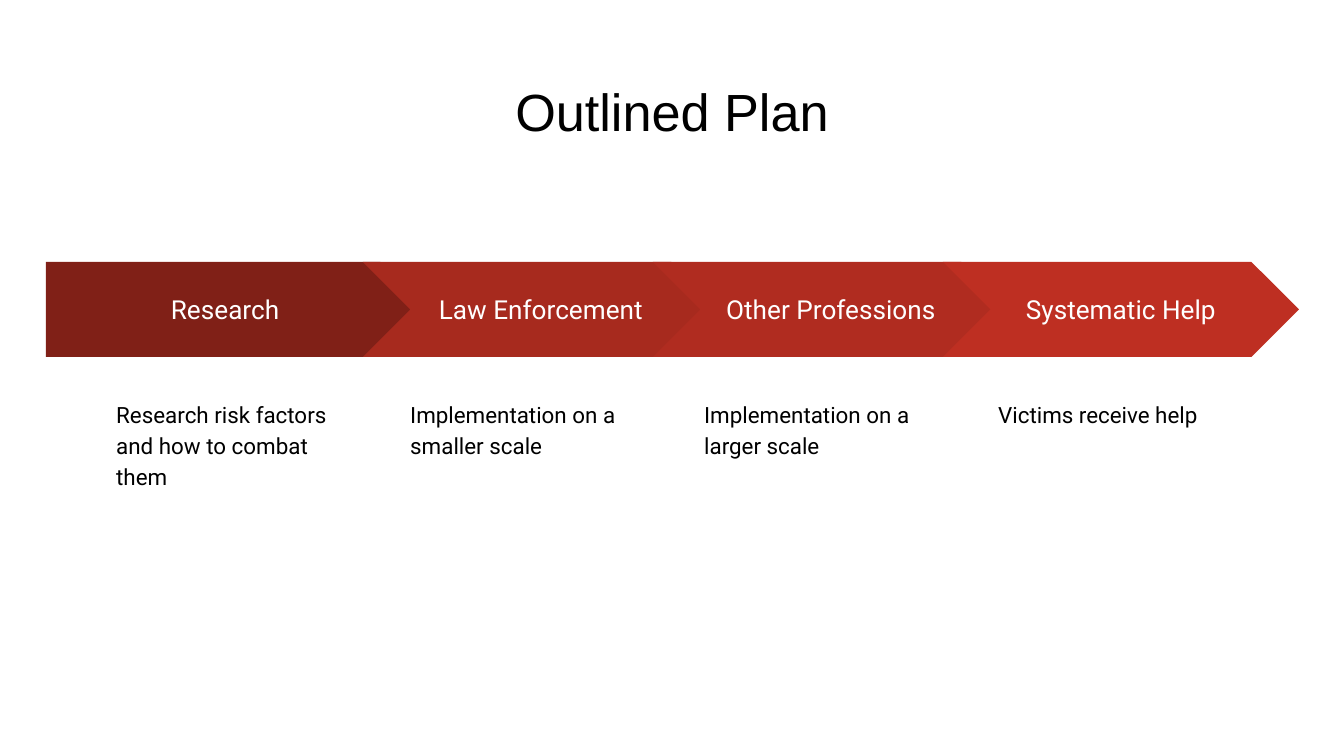
"""Build the Outlined Plan slide: four chained steps with a note under each."""
import pptx
import pptx.dml.color
import pptx.enum.shapes
import pptx.enum.text
import pptx.util

RGBColor = pptx.dml.color.RGBColor
MSO_SHAPE = pptx.enum.shapes.MSO_SHAPE
PP_ALIGN = pptx.enum.text.PP_ALIGN
MSO_ANCHOR = pptx.enum.text.MSO_ANCHOR

BLACK = RGBColor(0x00, 0x00, 0x00)
WHITE = RGBColor(0xFF, 0xFF, 0xFF)
DARK_RED = RGBColor(0x80, 0x20, 0x17)
BRICK_RED = RGBColor(0xA7, 0x2A, 0x1E)
MEDIUM_RED = RGBColor(0xB0, 0x2C, 0x20)
BRIGHT_RED = RGBColor(0xBE, 0x2F, 0x22)

EMU_PER_PX = 914400 / 134.4
MARGIN = 46
STEP_TOP, STEP_HEIGHT = 262, 95
STEP_WIDTH, STEP_PITCH = 356, 290
FIRST_STEP_WIDTH = 382
SECOND_STEP_LEFT = 363
NOTE_LEFT, NOTE_TOP, NOTE_PITCH = 103, 384, 294
NOTE_WIDTH, NOTE_HEIGHT = 267, 109


def px(*lengths):
    return [pptx.util.Emu(round(length * EMU_PER_PX)) for length in lengths]


def write_text(shape, text, *, size, color, font="Roboto", align=PP_ALIGN.LEFT,
               anchor=MSO_ANCHOR.TOP, line_spacing=1.0):
    frame = shape.text_frame
    frame.word_wrap = True
    frame.auto_size = pptx.enum.text.MSO_AUTO_SIZE.NONE
    frame.vertical_anchor = anchor
    inset = pptx.util.Inches(0.1)
    frame.margin_left = frame.margin_right = inset
    frame.margin_top = frame.margin_bottom = inset
    paragraph = frame.paragraphs[0]
    paragraph.alignment = align
    paragraph.line_spacing = line_spacing
    paragraph.space_before = pptx.util.Pt(0)
    run = paragraph.add_run()
    run.text = text
    run.font.name = font
    run.font.size = pptx.util.Pt(size)
    run.font.color.rgb = color


presentation = pptx.Presentation()
presentation.slide_width, presentation.slide_height = px(1344, 756)
slide = presentation.slides.add_slide(presentation.slide_layouts[5])

title = slide.shapes.title
title.left, title.top, title.width, title.height = px(MARGIN, 66, 1252, 85)
write_text(title, "Outlined Plan", size=28, color=BLACK, font="Arial",
           align=PP_ALIGN.CENTER)

steps = [
    ("Research", "Research risk factors and how to combat them", DARK_RED),
    ("Law Enforcement", "Implementation on a smaller scale", BRICK_RED),
    ("Other Professions", "Implementation on a larger scale", MEDIUM_RED),
    ("Systematic Help", "Victims receive help", BRIGHT_RED),
]

for index, (name, note, color) in enumerate(steps):
    if index == 0:
        kind, left, width = MSO_SHAPE.PENTAGON, MARGIN, FIRST_STEP_WIDTH
    else:
        kind, width = MSO_SHAPE.CHEVRON, STEP_WIDTH
        left = SECOND_STEP_LEFT + (index - 1) * STEP_PITCH

    group = slide.shapes.add_group_shape()
    arrow = group.shapes.add_shape(kind, *px(left, STEP_TOP, width, STEP_HEIGHT))
    arrow.adjustments[0] = 0.5
    arrow.shadow.inherit = False
    arrow.fill.solid()
    arrow.fill.fore_color.rgb = color
    arrow.line.fill.background()
    write_text(arrow, name, size=14, color=WHITE, align=PP_ALIGN.CENTER,
               anchor=MSO_ANCHOR.MIDDLE)

    note_left = NOTE_LEFT + index * NOTE_PITCH
    note_box = group.shapes.add_textbox(
        *px(note_left, NOTE_TOP, NOTE_WIDTH, NOTE_HEIGHT))
    write_text(note_box, note, size=12, color=BLACK, line_spacing=1.15)

presentation.save("out.pptx")
